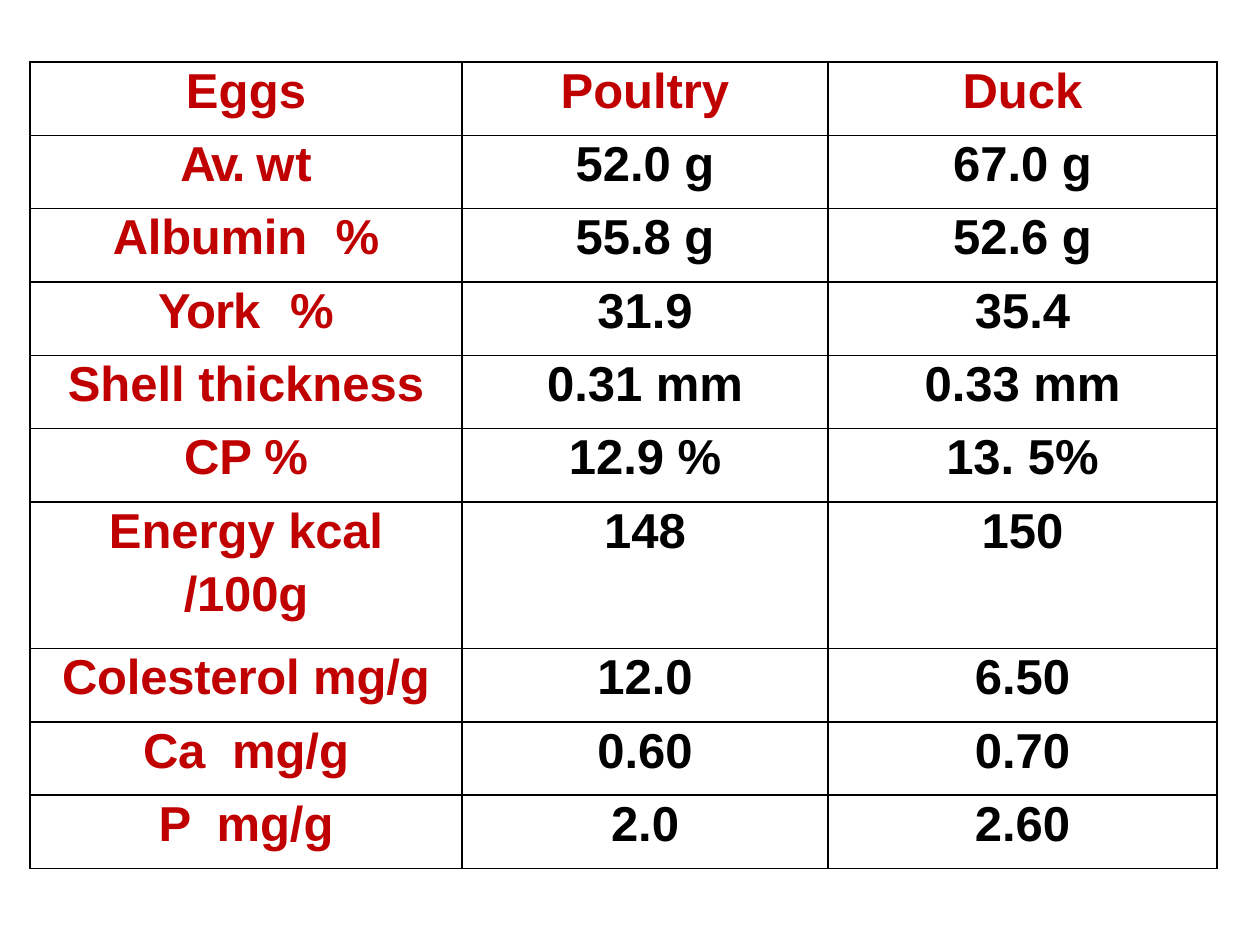
from lxml.etree import SubElement
from pptx import Presentation
from pptx.dml.color import RGBColor
from pptx.enum.text import PP_ALIGN
from pptx.oxml.ns import qn
from pptx.util import Pt

COLORS = {"label": "C00000", "value": "000000", "line": "000000", "back": "FFFFFF"}
SCALE = 914400 / 126


def px(size):
    return round(size * SCALE)


def add_text(para, text, color="value", size=28, track=0, before=1.3):
    """Add one bold run to a centred paragraph."""
    para.alignment = PP_ALIGN.CENTER
    para.space_before = Pt(before)
    run = para.add_run()
    run.text = text
    font = run.font
    font.name, font.size, font.bold = "Arial", Pt(size), True
    font.color.rgb = RGBColor.from_string(COLORS[color])
    if track:
        run._r.get_or_add_rPr().set("spc", str(track))


def add_tab(para, pos):
    tabs = SubElement(para._p.get_or_add_pPr(), qn("a:tabLst"))
    SubElement(tabs, qn("a:tab"), pos=str(px(pos)), algn="l")


class Deck:
    def __init__(self, width, height):
        self.file = Presentation()
        self.file.slide_width, self.file.slide_height = px(width), px(height)
        self.slide = self.file.slides.add_slide(self.file.slide_layouts[6])

    def table(self, left, top, widths, height, spans):
        """Add a bare table whose rows share the height by their spans."""
        frame = self.slide.shapes.add_table(
            len(spans), len(widths), px(left), px(top), px(sum(widths)), px(height))
        grid = frame.table
        grid.first_row = grid.horz_banding = False
        for col, width in zip(grid.columns, widths):
            col.width = px(width)
        for row, span in zip(grid.rows, spans):
            row.height = px(height) * span // sum(spans)
        for cell in grid.iter_cells():
            self.frame_cell(cell)
        return grid

    def frame_cell(self, cell):
        cell.margin_left = cell.margin_right = cell.margin_bottom = 0
        cell.margin_top = px(2)
        # Borders come before the fill
        props = cell._tc.get_or_add_tcPr()
        for side in ("lnL", "lnR", "lnT", "lnB"):
            line = SubElement(props, qn(f"a:{side}"), w=str(Pt(1)))
            fill = SubElement(line, qn("a:solidFill"))
            SubElement(fill, qn("a:srgbClr"), val=COLORS["line"])
        cell.fill.solid()
        cell.fill.fore_color.rgb = RGBColor.from_string(COLORS["back"])

    def label(self, cell, lines, tab=None):
        """Each line is a list of (text, tracking) runs."""
        body = cell.text_frame
        for num, runs in enumerate(lines):
            para = body.add_paragraph() if num else body.paragraphs[0]
            for text, track in runs:
                add_text(para, text, color="label", track=track, before=5 if num else 1.3)
            if tab:
                add_tab(para, tab)

    def value(self, cell, text, color="value"):
        add_text(cell.text_frame.paragraphs[0], text, color=color)


# Label lines, tab stop, poultry value, duck value
ROWS = [
    ([[("Eggs", 10)]], None, "Poultry", "Duck"),
    ([[("Av. ", -160), ("wt", 60)]], None, "52.0 g", "67.0 g"),
    ([[("Albumin\t", -10), ("%", 10)]], 223, "55.8 g", "52.6 g"),
    ([[("York\t", -60), ("%", 10)]], 132, "31.9", "35.4"),
    ([[("Shell thickness", 0)]], None, "0.31 mm", "0.33 mm"),
    ([[("CP ", -10), ("%", 10)]], None, "12.9 %", "13. 5%"),
    ([[("Energy ", 0), ("kcal", -10)], [("/100g", -10)]], None, "148", "150"),
    ([[("Colesterol ", -10), ("mg/g", 0)]], None, "12.0", "6.50"),
    ([[("Ca\t", -10), ("mg/g", 0)]], 89, "0.60", "0.70"),
    ([[("P\t", 10), ("mg/g", 0)]], 58, "2.0", "2.60"),
]


def main():
    deck = Deck(1260, 945)

    # Egg table: a row is as tall as its label has lines
    spans = [len(row[0]) for row in ROWS]
    grid = deck.table(30, 62, [432, 366, 389], 807, spans)
    for num, (lines, tab, *values) in enumerate(ROWS):
        deck.label(grid.cell(num, 0), lines, tab)
        for col, text in enumerate(values, 1):
            deck.value(grid.cell(num, col), text, color="value" if num else "label")

    deck.file.save("out.pptx")


if __name__ == "__main__":
    main()
